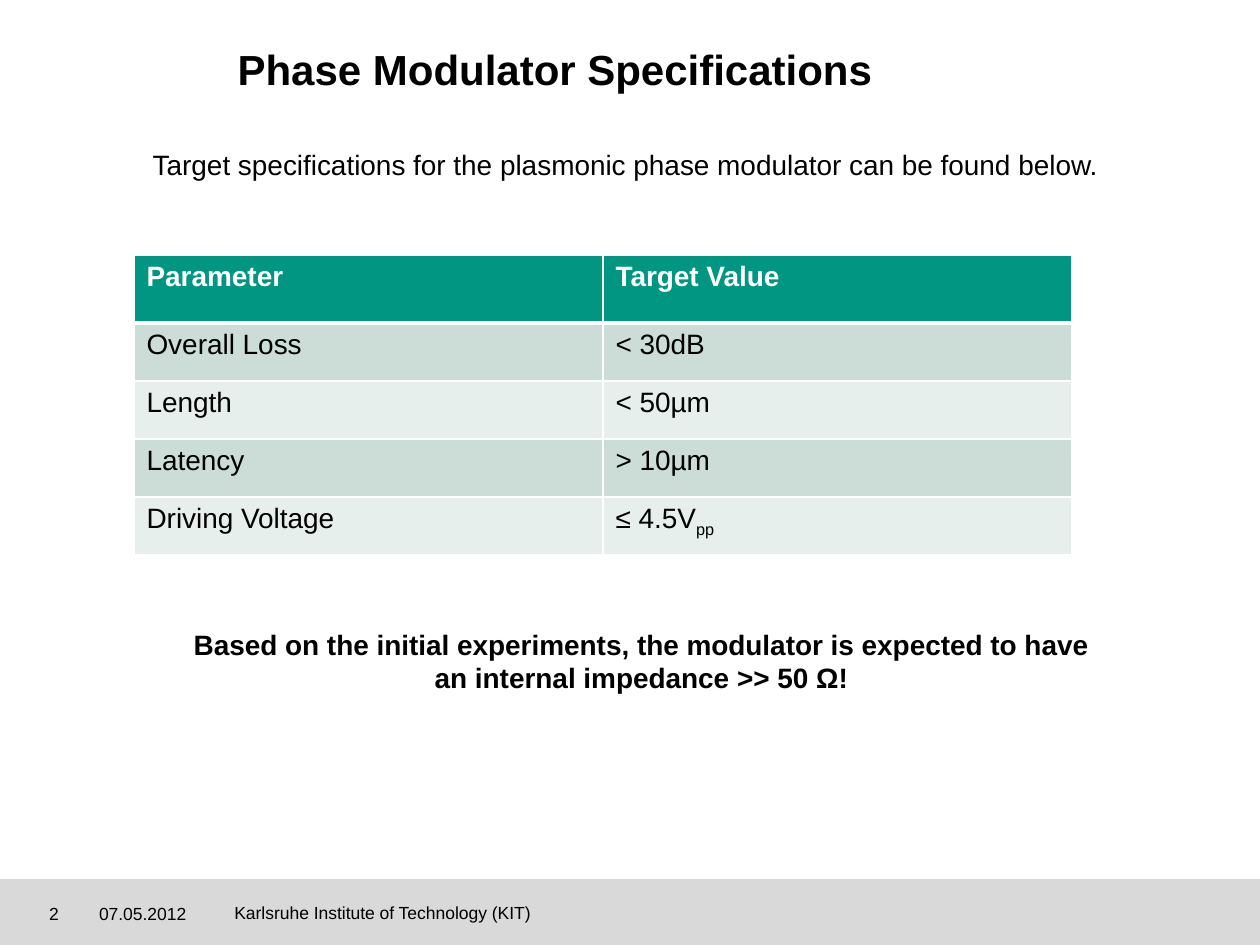
from dataclasses import dataclass

from lxml.etree import SubElement
from pptx import Presentation
from pptx.dml.color import RGBColor
from pptx.enum.shapes import MSO_SHAPE
from pptx.enum.text import MSO_ANCHOR, PP_ALIGN
from pptx.oxml.ns import qn
from pptx.util import Emu, Pt

PX = 914400 // 126
SLIDE_SIZE = (1260, 945)

TITLE = "Phase Modulator Specifications"
TITLE_BOX = (63, 23, 984, 97)
INTRO = ["Target specifications for the plasmonic phase modulator can be found below."]
INTRO_BOX = (40, 141, 1171, 47)
CONCLUSION = [
    "Based on the initial experiments, the modulator is expected to have",
    "an internal impedance >> 50 Ω!",
]
CONCLUSION_BOX = (19, 621, 1245, 81)

# Each cell is a list of (text, is subscript) runs
SPECIFICATIONS = [
    ([("Parameter", False)], [("Target Value", False)]),
    ([("Overall Loss", False)], [("< 30dB", False)]),
    ([("Length", False)], [("< 50µm", False)]),
    ([("Latency", False)], [("> 10µm", False)]),
    ([("Driving Voltage", False)], [("≤ 4.5V", False), ("pp", True)]),
]
TABLE_LEFT, TABLE_TOP = 134, 255
COLUMN_WIDTH, HEADER_HEIGHT, ROW_HEIGHT = 469, 68, 58

FOOTER_BAND = (0, 879, 1260, 66)
FOOTER_TEXTS = [
    ("2", (49, 903, 45, 24), 0),
    ("07.05.2012", (99, 903, 118, 24), 0),
    ("Karlsruhe Institute of Technology (KIT)", (222, 896, 339, 34), None),
]


@dataclass(frozen=True)
class Theme:
    font: str = "Arial"
    text: str = "000000"
    white: str = "FFFFFF"
    footer: str = "D9D9D9"
    header: str = "009682"
    bands: tuple = ("CCDDD8", "E7EFED")
    title_size: int = 24
    body_size: int = 16
    footer_size: int = 10
    rule: int = 1
    header_rule: int = 3


THEME = Theme()


def px(*lengths):
    return [Emu(length * PX) for length in lengths]


def add_run(paragraph, text, size, bold=False, color=THEME.text):
    run = paragraph.add_run()
    run.text = text
    run.font.name = THEME.font
    run.font.size = Pt(size)
    run.font.bold = bold
    run.font.color.rgb = RGBColor.from_string(color)
    return run


def add_text(slide, lines, box, size, bold=False, align=PP_ALIGN.LEFT, margin=None):
    """Add a text box; a margin of None keeps the default insets."""
    frame = slide.shapes.add_textbox(*px(*box)).text_frame
    frame.word_wrap = True
    if margin is not None:
        frame.margin_left = frame.margin_right = margin
        frame.margin_top = frame.margin_bottom = margin
    for index, line in enumerate(lines):
        paragraph = frame.add_paragraph() if index else frame.paragraphs[0]
        paragraph.alignment = align
        add_run(paragraph, line, size, bold)


def add_footer(slide):
    band = slide.shapes.add_shape(MSO_SHAPE.RECTANGLE, *px(*FOOTER_BAND))
    band.shadow.inherit = False
    band.fill.solid()
    band.fill.fore_color.rgb = RGBColor.from_string(THEME.footer)
    band.line.fill.background()
    for text, box, margin in FOOTER_TEXTS:
        add_text(slide, [text], box, THEME.footer_size, margin=margin)


def add_title(slide):
    title = slide.shapes.title
    title.left, title.top, title.width, title.height = px(*TITLE_BOX)
    title.text_frame.vertical_anchor = MSO_ANCHOR.MIDDLE
    paragraph = title.text_frame.paragraphs[0]
    paragraph.alignment = PP_ALIGN.CENTER
    paragraph.line_spacing = 0.9
    add_run(paragraph, TITLE, THEME.title_size, bold=True)


def set_borders(cell, widths):
    properties = cell._tc.get_or_add_tcPr()
    for side, width in widths.items():
        line = SubElement(properties, qn(f"a:ln{side}"), w=str(Pt(width)))
        fill = SubElement(line, qn("a:solidFill"))
        SubElement(fill, qn("a:srgbClr"), val=THEME.white)


def add_specifications(slide):
    row_heights = [HEADER_HEIGHT] + [ROW_HEIGHT] * (len(SPECIFICATIONS) - 1)
    column_count = len(SPECIFICATIONS[0])
    table = slide.shapes.add_table(
        len(SPECIFICATIONS), column_count,
        *px(TABLE_LEFT, TABLE_TOP, COLUMN_WIDTH * column_count, sum(row_heights)),
    ).table
    for column in table.columns:
        column.width = Emu(COLUMN_WIDTH * PX)
    for row_index, (values, height) in enumerate(zip(SPECIFICATIONS, row_heights)):
        table.rows[row_index].height = Emu(height * PX)
        is_header = row_index == 0
        fill = THEME.header if is_header else THEME.bands[(row_index - 1) % 2]
        color = THEME.white if is_header else THEME.text
        borders = dict.fromkeys("LRTB", THEME.rule)
        if is_header:
            borders["B"] = THEME.header_rule
        elif row_index == 1:
            borders["T"] = THEME.header_rule
        for column_index, runs in enumerate(values):
            cell = table.cell(row_index, column_index)
            set_borders(cell, borders)
            cell.fill.solid()
            cell.fill.fore_color.rgb = RGBColor.from_string(fill)
            paragraph = cell.text_frame.paragraphs[0]
            for text, is_subscript in runs:
                run = add_run(paragraph, text, THEME.body_size, is_header, color)
                if is_subscript:
                    run._r.get_or_add_rPr().set("baseline", "-25000")


def main():
    presentation = Presentation()
    presentation.slide_width, presentation.slide_height = px(*SLIDE_SIZE)
    slide = presentation.slides.add_slide(presentation.slide_layouts[5])
    add_footer(slide)
    add_title(slide)
    add_specifications(slide)
    add_text(slide, INTRO, INTRO_BOX, THEME.body_size, align=PP_ALIGN.CENTER)
    add_text(slide, CONCLUSION, CONCLUSION_BOX, THEME.body_size, True, PP_ALIGN.CENTER)
    presentation.save("out.pptx")


if __name__ == "__main__":
    main()
